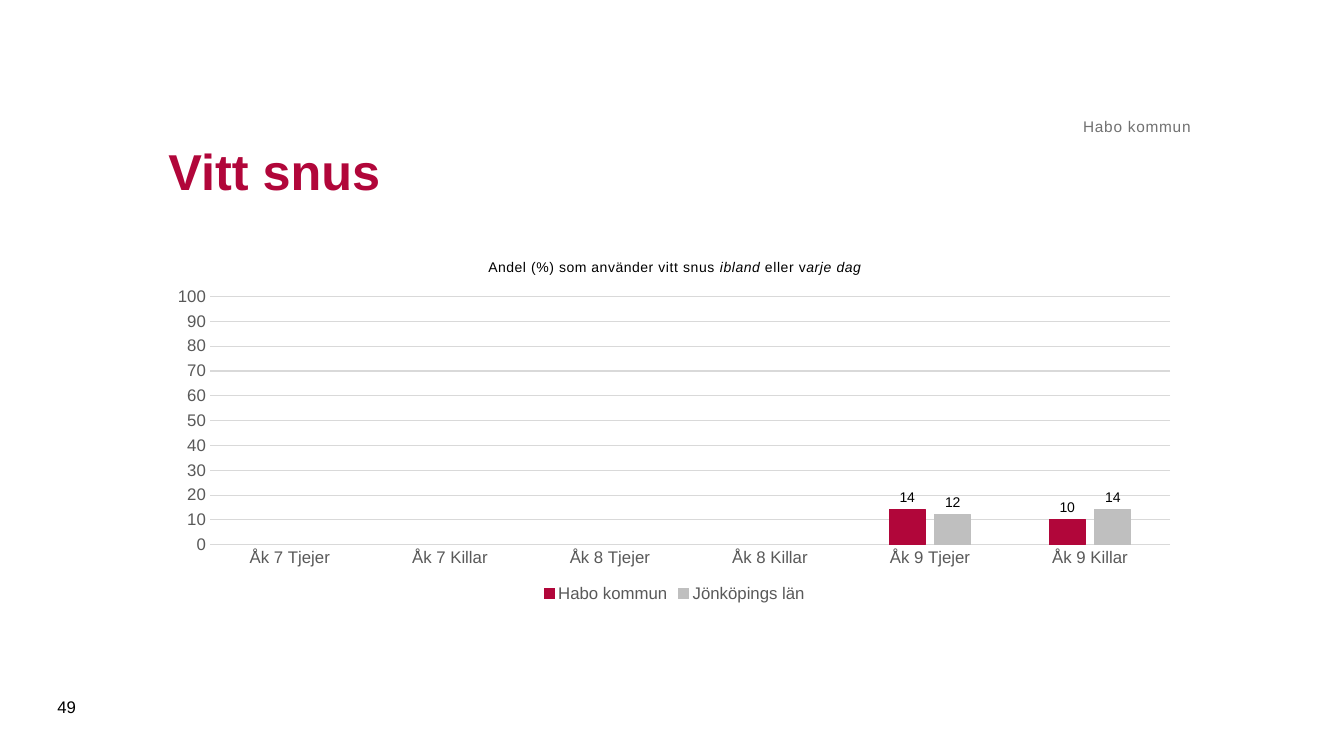
from lxml import etree
from pptx import Presentation
from pptx import util as u
from pptx.chart.data import CategoryChartData
from pptx.dml.color import RGBColor
from pptx.enum import chart as ch, text as tx
from pptx.oxml import parse_xml
from pptx.oxml.ns import nsdecls, qn

CRIMSON = RGBColor(0xB1, 0x06, 0x3A)
SILVER = RGBColor(0xBF, 0xBF, 0xBF)
GRID = RGBColor(0xD9, 0xD9, 0xD9)
AXIS_TEXT = RGBColor(0x59, 0x59, 0x59)
LABEL_TEXT = RGBColor(0x71, 0x71, 0x71)
BLACK = RGBColor(0, 0, 0)

FONT = "Arial"
NUMBERS = "#,##0;#,##0"
LEFT, WIDTH = 1.57, 10.24
CATEGORIES = [f"Åk {grade} {group}" for grade in (7, 8, 9) for group in ("Tjejer", "Killar")]
SERIES = {
    "Habo kommun": ([None] * 4 + [14, 10], CRIMSON),
    "Jönköpings län": ([None] * 4 + [12, 14], SILVER),
}
CHART_TITLE = [
    ("Andel (%) som\u00a0använder vitt snus ", False),
    ("ibland", True),
    (" eller v", False),
    ("arje dag", True),
]


def set_all(target, **values):
    for key, value in values.items():
        setattr(target, key, value)


def style_font(font, size, color, bold=False, italic=False):
    set_all(font, name=FONT, size=u.Pt(size), bold=bold, italic=italic)
    font.color.rgb = color


def style_line(line, color):
    line.color.rgb = color
    line.width = u.Pt(0.75)


def place(shape, box):
    for key, value in zip(("left", "top", "width", "height"), box):
        setattr(shape, key, u.Inches(value))


def add_heading(slide, box):
    heading = slide.shapes.title
    place(heading, box)
    frame = heading.text_frame
    set_all(frame, vertical_anchor=tx.MSO_ANCHOR.MIDDLE, word_wrap=True,
            auto_size=tx.MSO_AUTO_SIZE.NONE)
    paragraph = frame.paragraphs[0]
    paragraph.alignment = tx.PP_ALIGN.LEFT
    run = paragraph.add_run()
    run.text = "Vitt snus"
    style_font(run.font, 36, CRIMSON, bold=True)


def add_label(slide, box, words, size, color, align, anchor, inset=None, spacing=None):
    frame = slide.shapes.add_textbox(*map(u.Inches, box)).text_frame
    set_all(frame, word_wrap=True, vertical_anchor=anchor)
    if inset is not None:
        set_all(frame, **{f"margin_{side}": u.Inches(inset)
                          for side in ("left", "top", "right", "bottom")})
    paragraph = frame.paragraphs[0]
    paragraph.alignment = align
    run = paragraph.add_run()
    run.text = words
    style_font(run.font, size, color)
    if spacing:
        run.font._element.set("spc", str(int(spacing * 100)))


def add_chart_title(chart):
    chart.has_title = True
    chart.chart_title.include_in_layout = False
    paragraph = chart.chart_title.text_frame.paragraphs[0]
    for words, italic in CHART_TITLE:
        run = paragraph.add_run()
        run.text = words
        style_font(run.font, 10, BLACK, italic=italic)
        run.font._element.set("spc", "50")


def fix_plot_area(chart, x, y, w, h):
    area = chart._chartSpace.find(".//" + qn("c:plotArea"))
    for layout in area.findall(qn("c:layout")):
        area.remove(layout)
    layout = parse_xml(f'<c:layout {nsdecls("c")}><c:manualLayout/></c:layout>')
    parts = dict(layoutTarget="inner", xMode="edge", yMode="edge", x=x, y=y, w=w, h=h)
    for tag, value in parts.items():
        etree.SubElement(layout[0], qn(f"c:{tag}")).set("val", str(value))
    area.insert(0, layout)


def add_snus_chart(slide, box):
    data = CategoryChartData(number_format=NUMBERS)
    data.categories = CATEGORIES
    for name, (shares, _) in SERIES.items():
        data.add_series(name, shares)
    chart = slide.shapes.add_chart(
        ch.XL_CHART_TYPE.COLUMN_CLUSTERED, *map(u.Inches, box), data).chart
    style_font(chart.font, 10, BLACK)
    add_chart_title(chart)
    fix_plot_area(chart, 0.05, 0.15, 0.93, 0.68)

    # Axes
    years, percent = chart.category_axis, chart.value_axis
    for axis in (years, percent):
        set_all(axis, major_tick_mark=ch.XL_TICK_MARK.NONE,
                minor_tick_mark=ch.XL_TICK_MARK.NONE)
        style_font(axis.tick_labels.font, 12, AXIS_TEXT)
    style_line(years.format.line, GRID)
    set_all(percent, minimum_scale=0, maximum_scale=100, major_unit=10,
            has_major_gridlines=True)
    set_all(percent.tick_labels, number_format=NUMBERS, number_format_is_linked=False)
    style_line(percent.major_gridlines.format.line, GRID)
    percent.format.line.fill.background()

    # Legend
    chart.has_legend = True
    set_all(chart.legend, position=ch.XL_LEGEND_POSITION.BOTTOM, include_in_layout=False)
    style_font(chart.legend.font, 12, AXIS_TEXT)

    # Columns and their values
    plot = chart.plots[0]
    set_all(plot, gap_width=219, overlap=-27, vary_by_categories=False)
    for series, (_, color) in zip(plot.series, SERIES.values()):
        series.format.fill.solid()
        series.format.fill.fore_color.rgb = color
        style_line(series.format.line, color)
        labels = series.data_labels
        set_all(labels, show_value=True, position=ch.XL_LABEL_POSITION.OUTSIDE_END,
                number_format=NUMBERS, number_format_is_linked=False)
        style_font(labels.font, 10, BLACK)


def main():
    deck = Presentation()
    set_all(deck, slide_width=u.Inches(13.33), slide_height=u.Inches(7.5))
    slide = deck.slides.add_slide(deck.slide_layouts[5])
    add_snus_chart(slide, (LEFT, 2.4, WIDTH, 3.62))
    add_heading(slide, (LEFT, 0.98, WIDTH, 1.42))
    # Municipality and page number
    add_label(slide, (LEFT, 0.62, WIDTH, 0.73), "Habo kommun", 11, LABEL_TEXT,
              tx.PP_ALIGN.RIGHT, tx.MSO_ANCHOR.BOTTOM, inset=0, spacing=0.5)
    add_label(slide, (0.47, 6.81, 0.57, 0.4), "49", 12, BLACK,
              tx.PP_ALIGN.LEFT, tx.MSO_ANCHOR.MIDDLE)
    deck.save("out.pptx")


if __name__ == "__main__":
    main()
